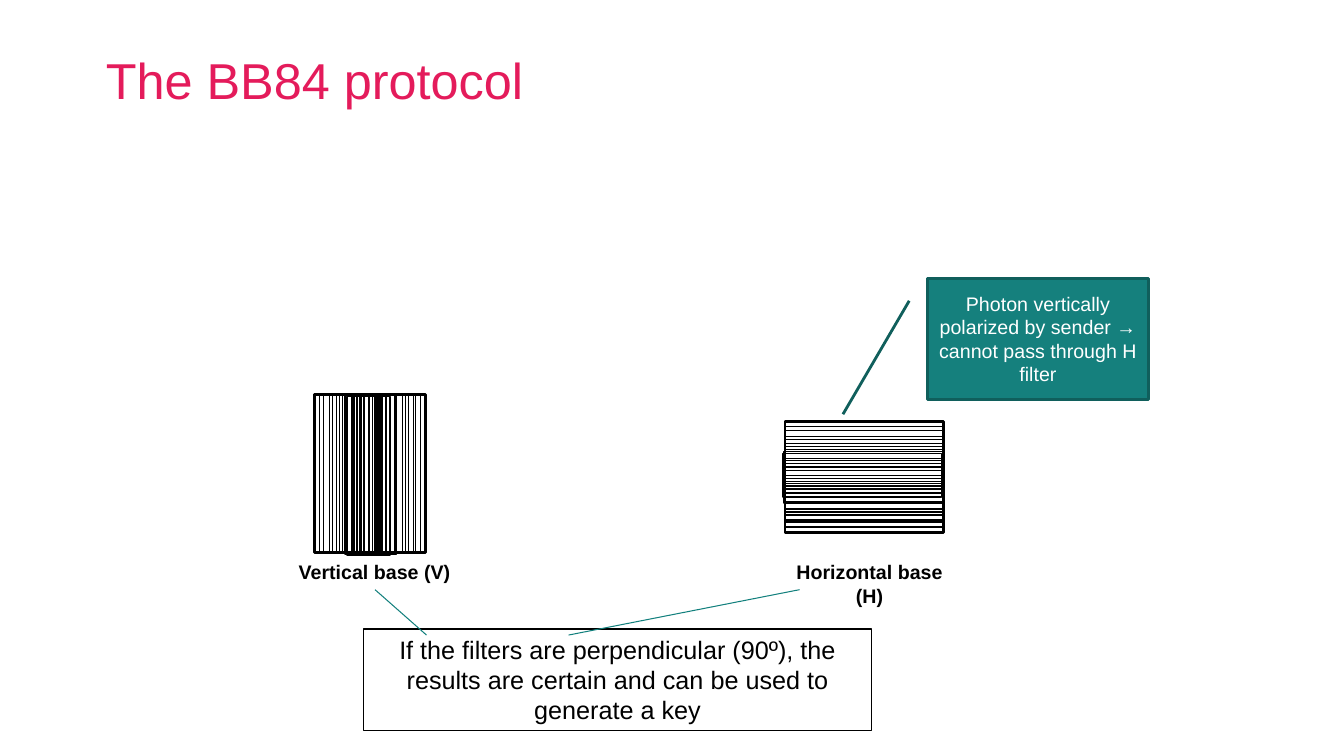
"""Build the slide on perpendicular filters in the BB84 protocol."""
from lxml import etree
from pptx import Presentation
from pptx.dml.color import RGBColor
from pptx.enum.shapes import MSO_CONNECTOR, MSO_SHAPE
from pptx.enum.text import MSO_ANCHOR, MSO_AUTO_SIZE, PP_ALIGN
from pptx.oxml.ns import qn
from pptx.util import Inches, Pt

FONT = "Arial"
PINK = RGBColor(0xE4, 0x1B, 0x5B)
BLACK = RGBColor(0x00, 0x00, 0x00)
WHITE = RGBColor(0xFF, 0xFF, 0xFF)
TEAL = RGBColor(0x15, 0x80, 0x7D)
LINK_TEAL = RGBColor(0x12, 0x80, 0x7D)
DARK_TEAL = RGBColor(0x10, 0x5F, 0x5C)
RECTANGLE, CALLOUT = MSO_SHAPE.RECTANGLE, MSO_SHAPE.LINE_CALLOUT_1
STRAIGHT = MSO_CONNECTOR.STRAIGHT
LEFT, CENTER = PP_ALIGN.LEFT, PP_ALIGN.CENTER
TOP, MIDDLE = MSO_ANCHOR.TOP, MSO_ANCHOR.MIDDLE
FIT_SHAPE = MSO_AUTO_SIZE.SHAPE_TO_FIT_TEXT

TITLE = ("The BB84 protocol", (1.05, 0.44, 11.43, 1.01))
BASE_LABELS = [
    ("Vertical base (V)", (2.78, 5.51, 1.87, 0.34)),
    ("Horizontal base (H)", (7.69, 5.51, 1.87, 0.57)),
]
CONCLUSION = (
    "If the filters are perpendicular (90º), the results are certain "
    "and can be used to generate a key",
    (3.61, 6.24, 5.03, 1.01),
)
PHOTON_NOTE = (
    "Photon vertically polarized by sender → cannot pass through H filter",
    (9.2, 2.76, 2.19, 1.2),
)
LINKS = [((4.23, 6.3), (3.72, 5.85)), ((5.64, 6.3), (7.93, 5.85))]

FILTER_WIDTH, FILTER_HEIGHT = 1.1, 1.57
FILTERS = [((3.67, 4.7), False), ((8.57, 4.73), True)]
# Each slit: left offset, top offset, width
SLITS = [
    (0, 0, 1.1), (0.05, 0, 1), (0.09, 0, 0.91), (0.15, 0, 0.83),
    (0.18, 0, 0.75), (0.22, 0, 0.68), (0.25, 0, 0.62), (0.3, 0.01, 0.51),
    (0.37, 0.01, 0.43), (0.32, 0.02, 0.43), (0.28, 0, 0.43),
    (0.39, 0.01, 0.28), (0.42, 0, 0.23), (0.45, 0, 0.19),
    (0.46, 0.01, 0.16), (0.49, 0, 0.11),
]
CENTER_LINES = [0.54, 0.57]


def write(shape, text, size, color, align=CENTER, bold=False, anchor=TOP):
    """Put one styled paragraph into a shape."""
    frame = shape.text_frame
    frame.word_wrap = True
    frame.vertical_anchor = anchor
    paragraph = frame.paragraphs[0]
    paragraph.alignment = align
    run = paragraph.add_run()
    run.text = text
    run.font.name = FONT
    run.font.size = Pt(size)
    run.font.bold = bold
    run.font.color.rgb = color
    return frame


def add_text(slide, text, box, *style, **options):
    """Add a wrapped text box."""
    shape = slide.shapes.add_textbox(*map(Inches, box))
    return write(shape, text, *style, **options)


def add_outline(shapes, kind, box, color, width, fill=None):
    """Add a preset shape with an outline and an optional fill."""
    shape = shapes.add_shape(kind, *map(Inches, box))
    shape.shadow.inherit = False
    if fill is None:
        shape.fill.background()
    else:
        shape.fill.solid()
        shape.fill.fore_color.rgb = fill
    shape.line.color.rgb = color
    shape.line.width = Pt(width)
    return shape


def add_line(shapes, start, end, color):
    """Add a thin straight line without a shadow."""
    line = shapes.add_connector(STRAIGHT, *map(Inches, start + end))
    line.line.color.rgb = color
    line.line.width = Pt(0.75)
    etree.SubElement(line._element.spPr, qn("a:effectLst"))


def add_filter(slide, center, turned):
    """Draw a filter upright, or turned clockwise by a quarter."""
    shapes = slide.shapes.add_group_shape().shapes

    def place(x, y):
        x, y = (-y, x) if turned else (x, y)
        return center[0] + x, center[1] + y

    for index, (left, top, width) in enumerate(SLITS):
        x, y = place(left + (width - FILTER_WIDTH) / 2, top)
        box = (x - width / 2, y - FILTER_HEIGHT / 2, width, FILTER_HEIGHT)
        slit = add_outline(shapes, RECTANGLE, box, BLACK, 1 if index else 2)
        slit.rotation = 90 if turned else 0
    for left in CENTER_LINES:
        x = left - FILTER_WIDTH / 2
        start, end = place(x, -FILTER_HEIGHT / 2), place(x, FILTER_HEIGHT / 2)
        add_line(shapes, start, end, BLACK)


def main():
    """Assemble and save the slide."""
    presentation = Presentation()
    presentation.slide_width = Inches(13.33)
    presentation.slide_height = Inches(7.5)
    slide = presentation.slides.add_slide(presentation.slide_layouts[6])

    title = add_text(slide, *TITLE, 36, PINK, align=LEFT)
    title.margin_left = title.margin_right = title.margin_bottom = 0
    title.margin_top = Inches(0.05)

    for center, turned in FILTERS:
        add_filter(slide, center, turned)
    for text, box in BASE_LABELS:
        add_text(slide, text, box, 14, BLACK, bold=True).auto_size = FIT_SHAPE

    text, box = CONCLUSION
    conclusion = add_outline(slide.shapes, RECTANGLE, box, BLACK, 0.75)
    write(conclusion, text, 18, BLACK).auto_size = FIT_SHAPE
    for start, end in LINKS:
        add_line(slide.shapes, start, end, LINK_TEAL)

    text, box = PHOTON_NOTE
    note = add_outline(slide.shapes, CALLOUT, box, DARK_TEAL, 2, TEAL)
    write(note, text, 14, WHITE, anchor=MIDDLE)
    presentation.save("out.pptx")


if __name__ == "__main__":
    main()
